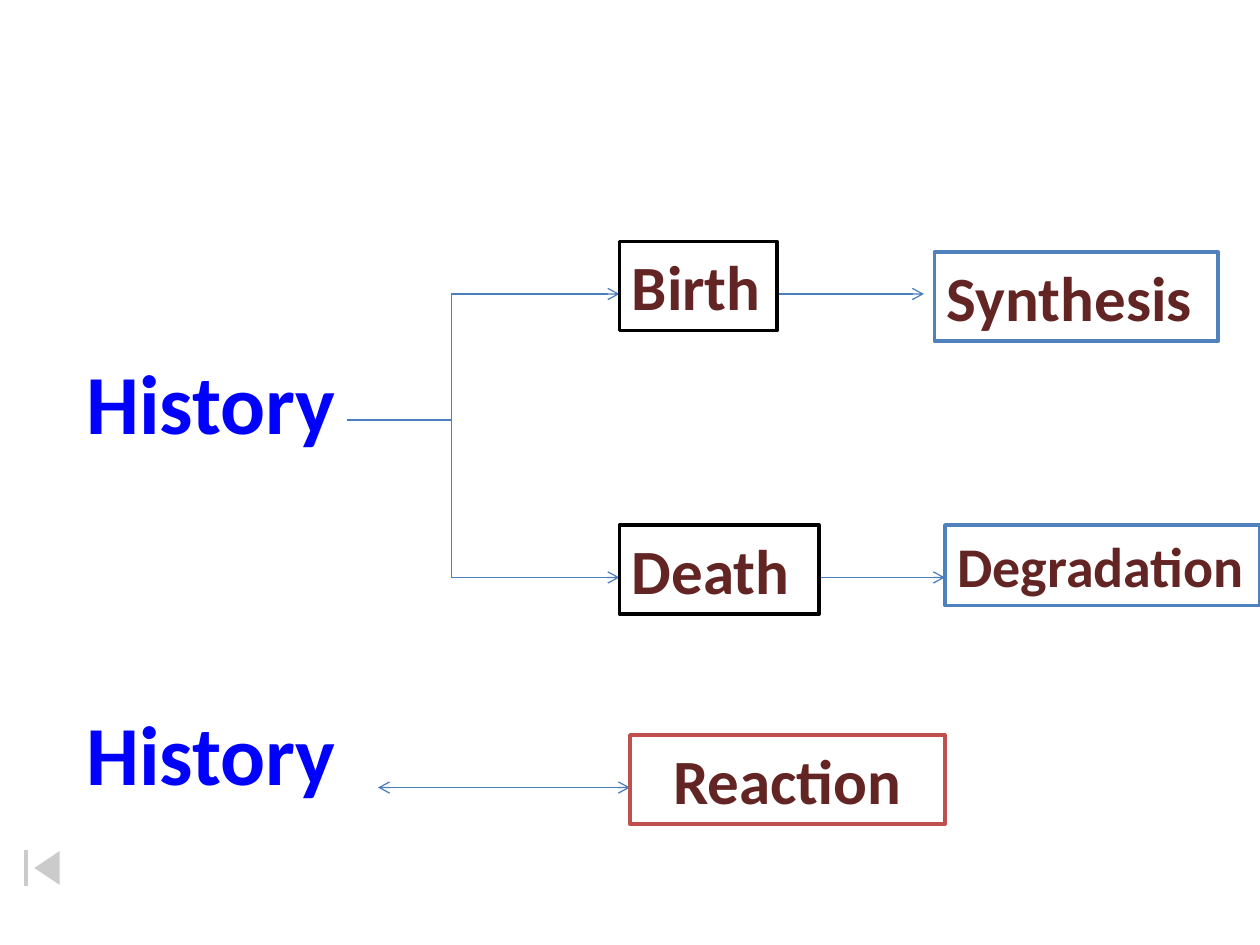
from lxml.etree import SubElement
from pptx import Presentation
from pptx.dml.color import RGBColor
from pptx.enum.shapes import MSO_CONNECTOR as Connector, MSO_SHAPE as Shape
from pptx.enum.text import MSO_AUTO_SIZE as AutoSize, PP_ALIGN as Align
from pptx.oxml.ns import qn
from pptx.util import Pt

# Content: history paragraphs as (text, space before)
HISTORY = [("History", 0), ("History", 143)]

# Boxes: text, left, top, width, height, line colour, text size, alignment
BOXES = [
    ("Birth", 354, 138, 90, 51, "000000", 36, Align.LEFT),
    ("Death", 354, 300, 114, 51, "000000", 36, Align.LEFT),
    ("Synthesis", 534, 144, 162, 51, "4F81BD", 36, Align.LEFT),
    ("Degradation", 540, 300, 180, 46, "4F81BD", 32, Align.LEFT),
    ("Reaction", 360, 420, 180, 51, "C0504D", 36, Align.CENTER),
]

# Lines: start x, start y, end x, end y, arrowhead ends
TRUNK, BIRTH_Y, DEATH_Y, REACTION_Y = 258, 168, 330, 450
LINES = [
    (198, 240, TRUNK, 240, ()),
    (TRUNK, BIRTH_Y, TRUNK, DEATH_Y, ()),
    (TRUNK, BIRTH_Y, 354, BIRTH_Y, ("tailEnd",)),
    (TRUNK, DEATH_Y, 354, DEATH_Y, ("tailEnd",)),
    (444, BIRTH_Y, 528, BIRTH_Y, ("tailEnd",)),
    (468, DEATH_Y, 540, DEATH_Y, ("tailEnd",)),
    (216, REACTION_Y, 360, REACTION_Y, ("headEnd", "tailEnd")),
]


def color(value):
    return RGBColor.from_string(value)


def apply(target, values):
    for name, value in values.items():
        setattr(target, name, value)


def place(shape, *lengths):
    apply(shape, dict(zip(("left", "top", "width", "height"), map(Pt, lengths))))


def write(paragraph, text, size, font_color):
    run = paragraph.add_run()
    run.text = text
    apply(run.font, {"name": "Calibri", "size": Pt(size), "bold": True})
    run.font.color.rgb = color(font_color)


def paint(shape, fill, line, width):
    shape.fill.solid()
    shape.fill.fore_color.rgb = color(fill)
    shape.line.color.rgb = color(line)
    shape.line.width = Pt(width)


def add_history(slide):
    body = slide.placeholders[1]
    place(body, 42, 60, 648, 438)
    frame = body.text_frame
    apply(frame, {"auto_size": AutoSize.NONE, "margin_top": Pt(140)})
    for index, (text, gap) in enumerate(HISTORY):
        paragraph = frame.add_paragraph() if index else frame.paragraphs[0]
        paragraph.space_before = Pt(gap)
        properties = paragraph._p.get_or_add_pPr()
        properties.set("marL", "0")
        properties.set("indent", "0")
        SubElement(properties, qn("a:buNone"))
        write(paragraph, text, 48, "0000FF")


def add_back_button(slide):
    button = slide.shapes.add_shape(
        Shape.ACTION_BUTTON_BEGINNING, Pt(0), Pt(482), Pt(48), Pt(28))
    button.shadow.inherit = False
    paint(button, "FFFFFF", "FFFFFF", 0.75)
    fill = button._element.spPr.find(qn("a:solidFill"))
    SubElement(fill[0], qn("a:alpha"), val="50000")


def add_line(slide, x1, y1, x2, y2, ends):
    connector = slide.shapes.add_connector(
        Connector.STRAIGHT, Pt(x1), Pt(y1), Pt(x2), Pt(y2))
    connector.line.color.rgb = color("4B7EBC")
    connector.line.width = Pt(0.75)
    for end in ends:
        SubElement(connector.line._get_or_add_ln(), qn(f"a:{end}"), type="arrow")
    SubElement(connector._element.spPr, qn("a:effectLst"))


def add_box(slide, text, left, top, width, height, line, size, align):
    box = slide.shapes.add_textbox(Pt(left), Pt(top), Pt(width), Pt(height))
    paint(box, "FFFFFF", line, 2)
    frame = box.text_frame
    apply(frame, {"word_wrap": True, "auto_size": AutoSize.SHAPE_TO_FIT_TEXT})
    frame.paragraphs[0].alignment = align
    write(frame.paragraphs[0], text, size, "632523")


def main():
    presentation = Presentation()
    apply(presentation, {"slide_width": Pt(720), "slide_height": Pt(540)})
    slide = presentation.slides.add_slide(presentation.slide_layouts[1])
    title = slide.shapes.title._element
    title.getparent().remove(title)

    add_history(slide)
    add_back_button(slide)
    for line in LINES:
        add_line(slide, *line)
    for box in BOXES:
        add_box(slide, *box)
    presentation.save("out.pptx")


if __name__ == "__main__":
    main()
